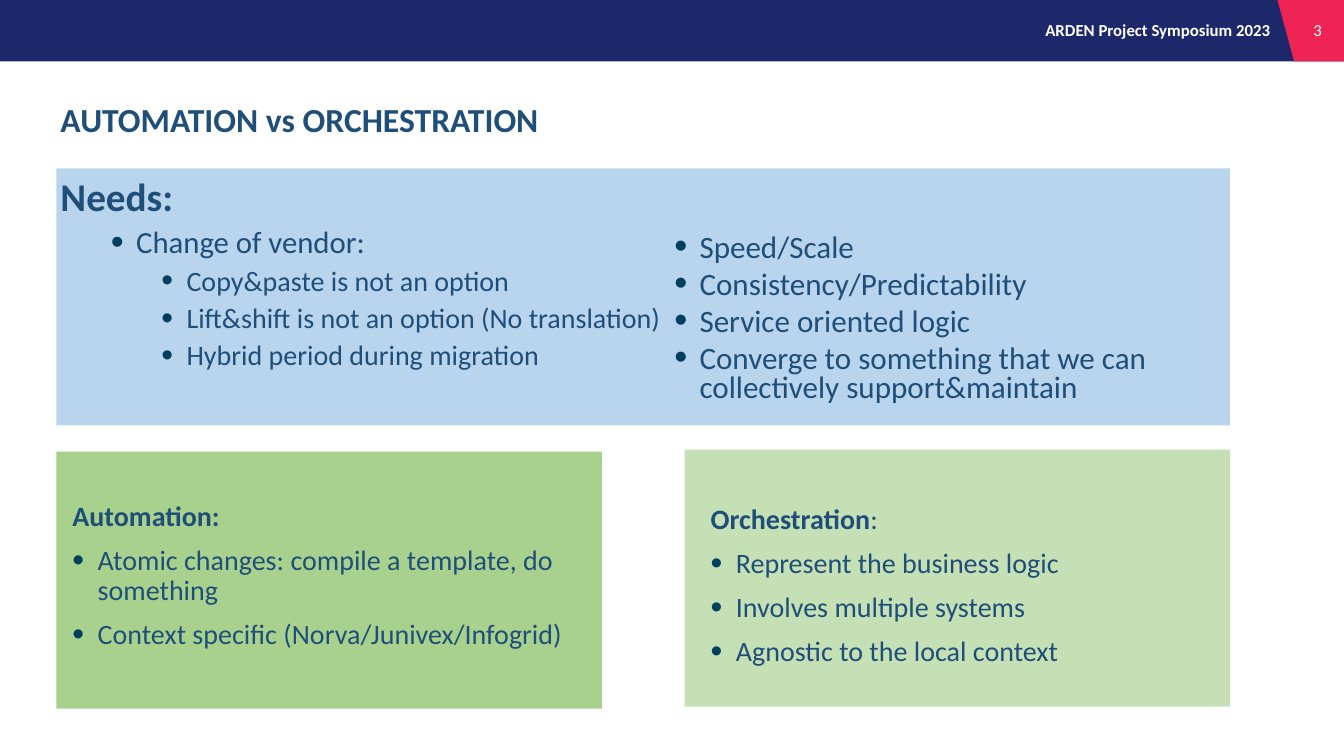
from lxml.etree import SubElement
from pptx import Presentation
from pptx.dml.color import RGBColor
from pptx.enum.shapes import MSO_SHAPE
from pptx.enum.text import MSO_ANCHOR, MSO_AUTO_SIZE, PP_ALIGN
from pptx.oxml.ns import qn
from pptx.util import Inches, Pt

FONT = "Calibri"
NAVY, CRIMSON, WHITE = "1D286B", "EE2455", "FFFFFF"
INK, BULLET = "1F4E79", "003F5E"
SKY, GREEN, PALE_GREEN = "9DC3E6", "A9D18E", "C5E0B4"
BULLET_HANG = 0.25


def colour(hex_string):
    return RGBColor.from_string(hex_string)


def add_panel(slide, box, fill, kind=MSO_SHAPE.RECTANGLE, alpha=None):
    panel = slide.shapes.add_shape(kind, *map(Inches, box))
    panel.shadow.inherit = False
    panel.fill.solid()
    panel.fill.fore_color.rgb = colour(fill)
    panel.line.fill.background()
    if alpha is not None:
        tint = panel.element.spPr.find(".//" + qn("a:srgbClr"))
        SubElement(tint, qn("a:alpha"), val=str(alpha * 1000))
    return panel


def prepare_frame(holder, anchor=MSO_ANCHOR.TOP):
    frame = holder.text_frame
    frame.word_wrap = True
    frame.auto_size = MSO_AUTO_SIZE.NONE
    frame.vertical_anchor = anchor
    return frame


def add_text_box(slide, box, anchor=MSO_ANCHOR.TOP):
    return prepare_frame(slide.shapes.add_textbox(*map(Inches, box)), anchor)


def place(placeholder, box, anchor=MSO_ANCHOR.TOP):
    """Move a placeholder into position, in front of the panels."""
    placeholder.left, placeholder.top, placeholder.width, placeholder.height = map(Inches, box)
    placeholder.element.getparent().append(placeholder.element)
    return prepare_frame(placeholder, anchor)


def add_run(paragraph, text, size, bold=False, ink=INK):
    run = paragraph.add_run()
    run.text = text
    run.font.name = FONT
    run.font.size = Pt(size)
    run.font.bold = bold
    run.font.color.rgb = colour(ink)


def next_paragraph(frame, before=0, spacing=0.9):
    first = not frame.paragraphs[0].runs
    paragraph = frame.paragraphs[0] if first else frame.add_paragraph()
    paragraph.alignment = PP_ALIGN.LEFT
    paragraph.line_spacing = spacing
    paragraph.space_before = Pt(0 if first else before)
    paragraph.space_after = Pt(0)
    return paragraph


def add_heading(frame, size, *parts):
    paragraph = next_paragraph(frame)
    properties = paragraph._p.get_or_add_pPr()
    properties.set("marL", "0")
    properties.set("indent", "0")
    SubElement(properties, qn("a:buNone"))
    for text, bold in parts:
        add_run(paragraph, text, size, bold)


def add_bullets(frame, items, size, indent, before, spacing=0.9, level=0):
    for item in items:
        paragraph = next_paragraph(frame, before, spacing)
        paragraph.level = level
        properties = paragraph._p.get_or_add_pPr()
        properties.set("marL", str(Inches(indent)))
        properties.set("indent", str(-Inches(BULLET_HANG)))
        bullet_colour = SubElement(properties, qn("a:buClr"))
        SubElement(bullet_colour, qn("a:srgbClr"), val=BULLET)
        SubElement(properties, qn("a:buSzPct"), val="120000")
        SubElement(properties, qn("a:buFont"), typeface="Arial")
        SubElement(properties, qn("a:buChar"), char="•")
        add_run(paragraph, item, size)


def add_header_text(slide, box, text, bold):
    paragraph = next_paragraph(add_text_box(slide, box, MSO_ANCHOR.MIDDLE), spacing=1)
    paragraph.alignment = PP_ALIGN.RIGHT
    add_run(paragraph, text, 12, bold, WHITE)


def add_header(slide):
    add_panel(slide, (0, -0.04, 13.33, 0.65), NAVY)
    corner = add_panel(slide, (12.66, -0.04, 1.13, 0.65), CRIMSON, MSO_SHAPE.PARALLELOGRAM)
    corner.adjustments[0] = 0.271
    corner.element.spPr.find(qn("a:xfrm")).set("flipH", "1")
    add_header_text(slide, (7.12, 0.12, 5.58, 0.36), "ARDEN Project Symposium 2023", True)
    add_header_text(slide, (12.71, 0.12, 0.5, 0.36), "3", False)


def main():
    deck = Presentation()
    deck.slide_width, deck.slide_height = Inches(13.33), Inches(7.5)
    slide = deck.slides.add_slide(deck.slide_layouts[1])
    title, body = slide.placeholders

    add_header(slide)

    # Coloured panels
    add_panel(slide, (6.79, 4.46, 5.41, 2.55), PALE_GREEN)
    add_panel(slide, (0.56, 4.48, 5.41, 2.55), GREEN)
    add_panel(slide, (0.56, 1.67, 11.64, 2.55), SKY, alpha=71)

    # Title
    title_frame = place(title, (0.5, 0.76, 12.34, 0.89), MSO_ANCHOR.MIDDLE)
    add_run(next_paragraph(title_frame), "AUTOMATION vs ORCHESTRATION", 24, True)

    # Needs, left and right columns
    needs = place(body, (0.5, 1.71, 6.17, 2.48))
    add_heading(needs, 28, ("Needs:", True))
    add_bullets(needs, ["Change of vendor:"], 22, 0.75, 5, level=1)
    add_bullets(needs, ["Copy&paste is not an option",
                        "Lift&shift is not an option (No translation)",
                        "Hybrid period during migration"], 20, 1.25, 5, level=2)
    goals = add_text_box(slide, (6.09, 2.28, 6.17, 1.85))
    add_bullets(goals, ["Speed/Scale", "Consistency/Predictability", "Service oriented logic",
                        "Converge to something that we can collectively support&maintain"],
                22.2, 0.75, 5, spacing=0.8, level=1)

    # Automation
    automation = add_text_box(slide, (0.62, 4.93, 5.35, 2.1))
    add_heading(automation, 20, ("Automation:", True))
    add_bullets(automation, ["Atomic changes: compile a template, do something",
                             "Context specific (Norva/Junivex/Infogrid)"], 20, 0.25, 10)

    # Orchestration
    orchestration = add_text_box(slide, (6.95, 4.96, 5.25, 2))
    add_heading(orchestration, 20, ("Orchestration", True), (":", False))
    add_bullets(orchestration, ["Represent the business logic", "Involves multiple systems",
                                "Agnostic to the local context"], 20, 0.25, 10)

    deck.save("out.pptx")


if __name__ == "__main__":
    main()
